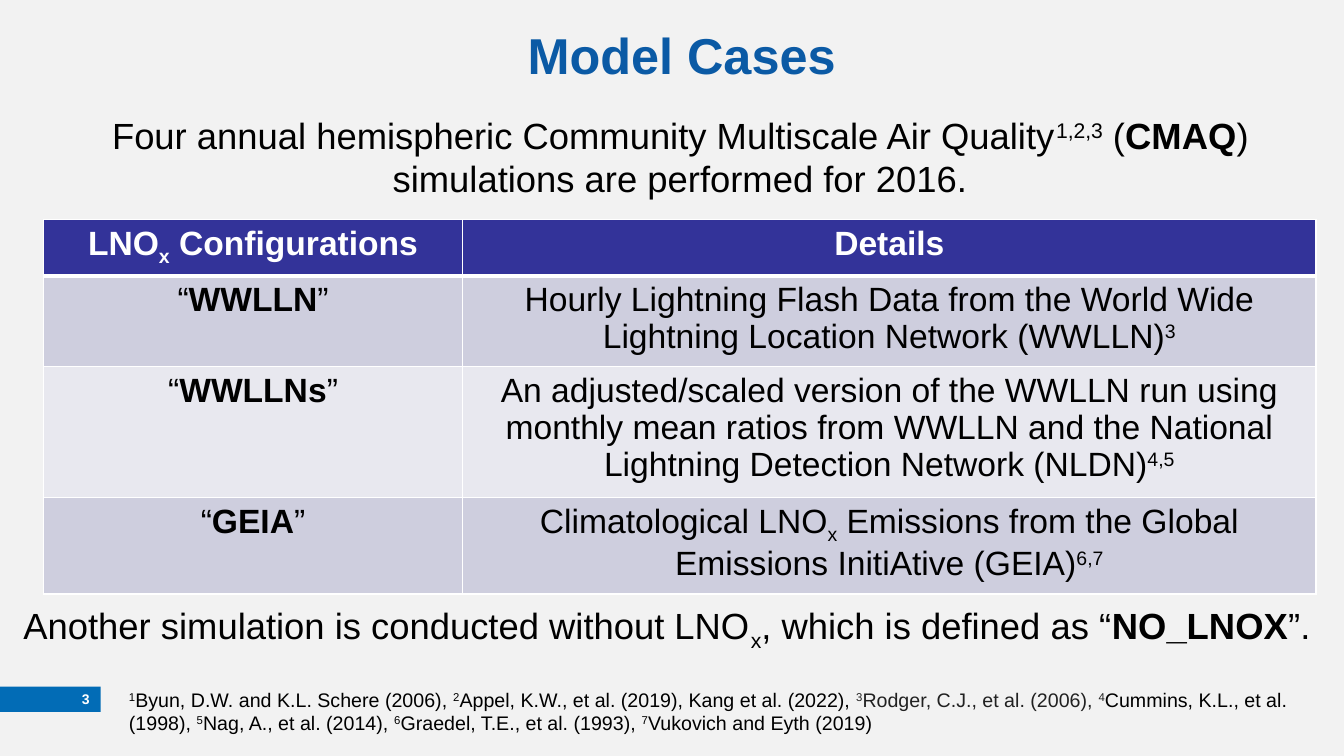
from lxml import etree
from pptx import Presentation
from pptx.dml.color import RGBColor
from pptx.enum.shapes import MSO_SHAPE
from pptx.enum.text import MSO_ANCHOR, MSO_AUTO_SIZE, PP_ALIGN
from pptx.oxml.ns import qn
from pptx.util import Pt

RECTANGLE = MSO_SHAPE.RECTANGLE
LEFT, CENTER, RIGHT = PP_ALIGN.LEFT, PP_ALIGN.CENTER, PP_ALIGN.RIGHT
TOP, MIDDLE = MSO_ANCHOR.TOP, MSO_ANCHOR.MIDDLE
NO_FIT = MSO_AUTO_SIZE.NONE

BLACK = RGBColor(0x00, 0x00, 0x00)
CHARCOAL = RGBColor(0x21, 0x21, 0x21)
WHITE = RGBColor(0xFF, 0xFF, 0xFF)
PAPER = RGBColor(0xF2, 0xF2, 0xF2)
TITLE_BLUE = RGBColor(0x0B, 0x5A, 0xA5)
BAR_BLUE = RGBColor(0x02, 0x6C, 0xB6)
HEADER_INDIGO = RGBColor(0x33, 0x33, 0x99)
BAND_DARK = RGBColor(0xCE, 0xCE, 0xDE)
BAND_LIGHT = RGBColor(0xE8, 0xE8, 0xEF)


def part(text, **style):
    """Pair a piece of text with its format: size, color, bold, baseline."""
    return text, style


def raised(text, **style):
    return part(text, baseline=30, **style)


def lowered(text, **style):
    return part(text, baseline=-25, **style)


class SlideBuilder:
    """Holds the style and the current page."""

    font_name = "Arial"

    def __init__(self, deck):
        self.page = deck.slides.add_slide(deck.slide_layouts[5])
        background = self.page.background.fill
        background.solid()
        background.fore_color.rgb = PAPER

    def fill_frame(self, frame, parts, align=LEFT, **common):
        para = frame.paragraphs[0]
        para.alignment = align
        for text, style in parts:
            self.add_span(para, text, **{**common, **style})

    def add_span(self, para, text, size, color=BLACK, bold=False, baseline=0):
        span = para.add_run()
        span.text = text
        span.font.name = self.font_name
        span.font.size = Pt(size)
        span.font.bold = bold
        span.font.color.rgb = color
        if baseline:
            span._r.get_or_add_rPr().set("baseline", str(baseline * 1000))

    def title(self, text, left, top, width, height):
        box = self.page.shapes.title
        box.left, box.top = Pt(left), Pt(top)
        box.width, box.height = Pt(width), Pt(height)
        box.text_frame.auto_size = NO_FIT
        self.fill_frame(box.text_frame, [part(text)], CENTER,
                        size=36, color=TITLE_BLUE, bold=True)

    def bar(self, left, top, width, height, color):
        shape = self.page.shapes.add_shape(RECTANGLE, Pt(left), Pt(top), Pt(width), Pt(height))
        shape.shadow.inherit = False
        shape.fill.solid()
        shape.fill.fore_color.rgb = color
        shape.line.fill.background()

    def text(self, parts, left, top, width, height, align=LEFT, anchor=TOP, inset=None, **common):
        box = self.page.shapes.add_textbox(Pt(left), Pt(top), Pt(width), Pt(height))
        frame = box.text_frame
        frame.word_wrap = True
        frame.vertical_anchor = anchor
        if inset is not None:
            frame.margin_left = frame.margin_right = Pt(inset)
            frame.margin_top = frame.margin_bottom = Pt(inset)
        self.fill_frame(frame, parts, align, **common)

    def table(self, rows, left, top, widths, heights):
        graphic = self.page.shapes.add_table(
            len(rows), len(widths), Pt(left), Pt(top), Pt(sum(widths)), Pt(sum(heights)))
        grid = graphic.table
        for column, width in zip(grid.columns, widths):
            column.width = Pt(width)
        for index, (row, height) in enumerate(zip(rows, heights)):
            grid.rows[index].height = Pt(height)
            header = index == 0
            band = BAND_DARK if index % 2 else BAND_LIGHT
            for position, parts in enumerate(row):
                cell = grid.cell(index, position)
                # The rule between header and body is heavier
                self.borders(cell, top=3 if index == 1 else 1, bottom=3 if header else 1)
                cell.fill.solid()
                cell.fill.fore_color.rgb = HEADER_INDIGO if header else band
                self.fill_frame(cell.text_frame, parts, CENTER, size=24,
                                color=WHITE if header else BLACK, bold=header)

    def borders(self, cell, top, bottom):
        properties = cell._tc.get_or_add_tcPr()
        for side, weight in (("L", 1), ("R", 1), ("T", top), ("B", bottom)):
            line = etree.SubElement(properties, qn(f"a:ln{side}"), w=str(Pt(weight)))
            fill = etree.SubElement(line, qn("a:solidFill"))
            etree.SubElement(fill, qn("a:srgbClr"), val=str(WHITE))


def case_name(name):
    return [part("“"), part(name, bold=True), part("”")]


def main():
    deck = Presentation()
    deck.slide_width, deck.slide_height = Pt(960), Pt(540)
    slide = SlideBuilder(deck)

    # Page number bar
    slide.bar(0, 490.5, 72, 18, BAR_BLUE)
    slide.text([part("3")], 0, 490.5, 64, 18, align=RIGHT, anchor=MIDDLE, inset=0,
               size=10, color=WHITE, bold=True)

    # Title and introduction
    slide.title("Model Cases", 241, 11.5, 492, 54)
    slide.text([
        part("Four annual hemispheric Community Multiscale Air Quality"), raised("1,2,3"),
        part(" ("), part("CMAQ", bold=True), part(") simulations are performed for 2016."),
    ], 32, 77, 908, 68, align=CENTER, size=26)

    # Model configurations
    slide.table([
        [[part("LNO"), lowered("x"), part(" Configurations")], [part("Details")]],
        [case_name("WWLLN"),
         [part("Hourly Lightning Flash Data from the World Wide Lightning Location "
               "Network (WWLLN)"), raised("3")]],
        [case_name("WWLLNs"),
         [part("An adjusted/scaled version of the WWLLN run using monthly mean ratios from "
               "WWLLN and the National Lightning Detection Network (NLDN)"), raised("4,5")]],
        [case_name("GEIA"),
         [part("Climatological LNO"), lowered("x"),
          part(" Emissions from the Global Emissions InitiAtive (GEIA)"), raised("6,7")]],
    ], 31, 157, widths=[299.5, 609.5], heights=[40, 64.5, 93.5, 68.5])

    # Closing remark
    slide.text([
        part("Another simulation is conducted without LNO"), lowered("x"),
        part(", which is defined as “"), part("NO_LNOX", bold=True), part("”. "),
    ], 0, 427.5, 960, 39, align=CENTER, size=26)

    # References
    slide.text([
        raised("1"), part("Byun, D.W. and K.L. Schere (2006), "),
        raised("2"), part("Appel, K.W., et al. (2019), Kang et al. (2022), "),
        raised("3", color=CHARCOAL), part("Rodger, C.J., et al. (2006), ", color=CHARCOAL),
        raised("4", color=CHARCOAL), part("Cummins, K.L., et al. (1998), "),
        raised("5"), part("Nag, A., et al. (2014), "),
        raised("6"), part("Graedel, T.E., et al. (1993), "),
        raised("7"), part("Vukovich and Eyth (2019)"),
    ], 85, 487.5, 855, 41, size=14)

    deck.save("out.pptx")


if __name__ == "__main__":
    main()
